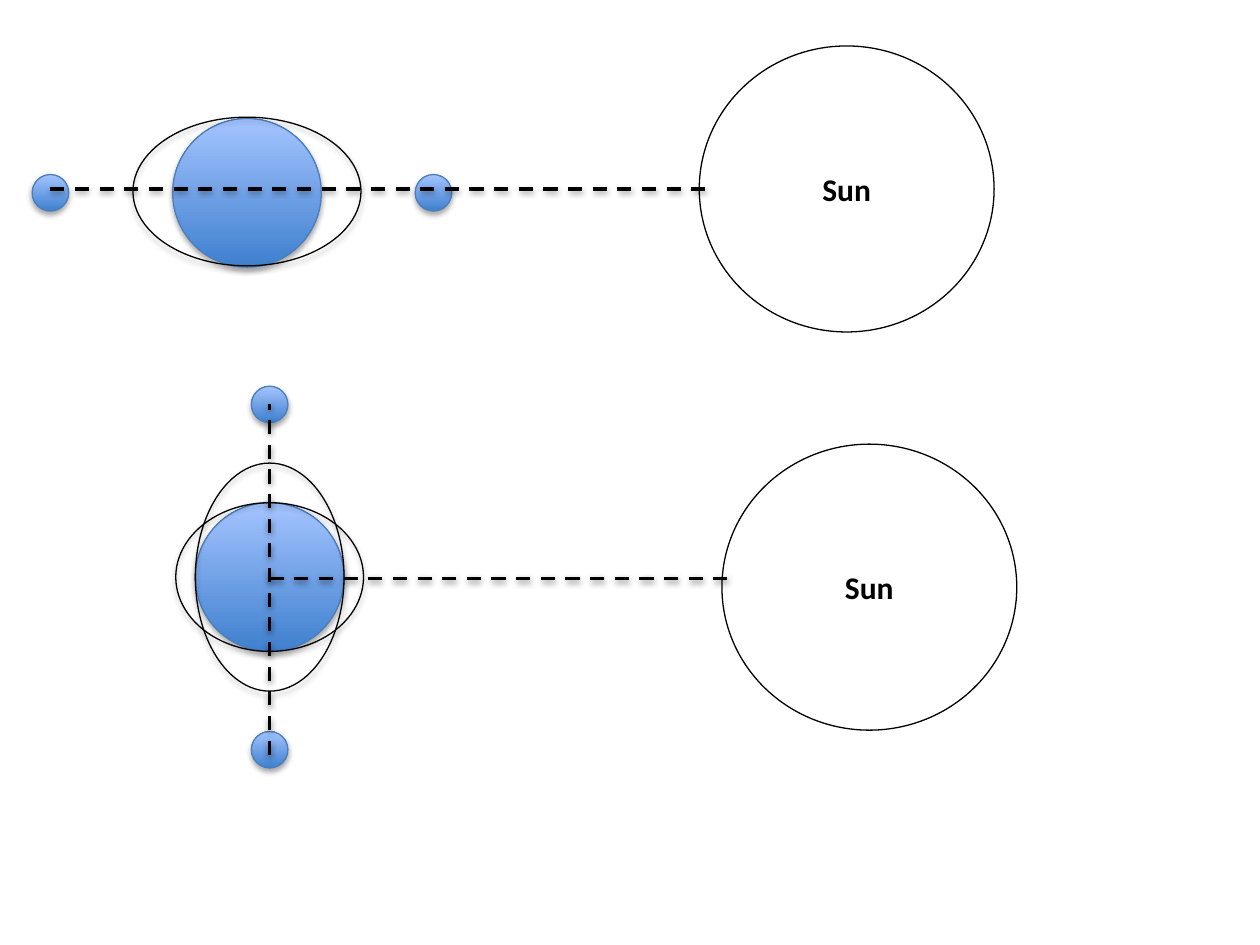
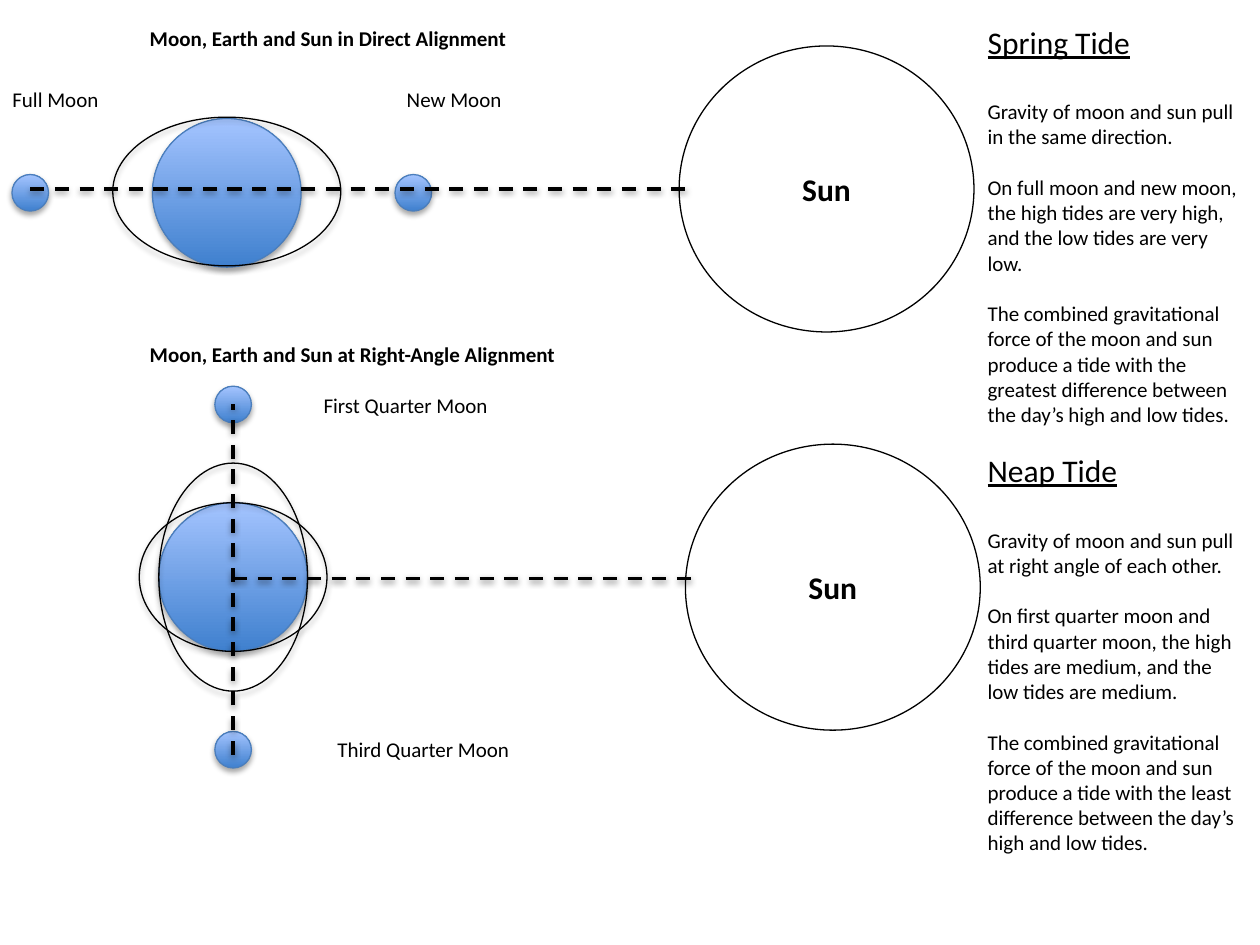
from dataclasses import dataclass

from lxml.etree import SubElement
from pptx import Presentation
from pptx.dml.color import RGBColor
from pptx.enum.dml import MSO_LINE_DASH_STYLE as Dash
from pptx.enum.shapes import MSO_CONNECTOR as Connector, MSO_SHAPE as Shape
from pptx.enum.text import MSO_ANCHOR as Anchor, MSO_AUTO_SIZE as AutoSize, PP_ALIGN as Align
from pptx.oxml.ns import qn
from pptx.util import Inches, Pt


@dataclass(frozen=True)
class Theme:
    font: str = "Calibri"
    ink: RGBColor = RGBColor.from_string("000000")
    globe_dark: RGBColor = RGBColor.from_string("3F80CE")
    globe_light: RGBColor = RGBColor.from_string("A4C4FF")
    globe_edge: RGBColor = RGBColor.from_string("4B7EBC")
    heading: int = 18
    body: int = 12
    outline: float = 0.75
    axis: int = 2


EARTH = 1.18
MOON = 0.29
TIDE_LONG, TIDE_SHORT = 1.81, 1.49
SUN_WIDTH, SUN_HEIGHT = 2.34, 2.27
SUN_OFFSET = 4.76       # from the Earth's centre to the Sun's
SUN_LINE_END = 3.66     # from the Earth's centre to the end of the axis


def add_shadow(effects, distance, opacity):
    """Fill an effect list with a soft shadow that falls straight down."""
    shadow = SubElement(effects, qn("a:outerShdw"), blurRad=str(Pt(3.15)),
                        dist=str(Pt(distance)), dir="5400000", rotWithShape="0")
    color = SubElement(shadow, qn("a:srgbClr"), val=str(Theme.ink))
    SubElement(color, qn("a:alpha"), val=str(opacity * 1000))


class Sketch:
    def __init__(self, presentation, theme):
        self.presentation = presentation
        self.theme = theme
        self.slide = None

    def new_slide(self):
        self.slide = self.presentation.slides.add_slide(self.presentation.slide_layouts[6])

    def style(self, paragraph, size, bold=False, underline=False):
        font = paragraph.font
        font.name, font.size = self.theme.font, Pt(size)
        font.bold, font.underline = bold, underline
        font.color.rgb = self.theme.ink

    def ellipse(self, x, y, width, height, shadow=True):
        """Draw an unfilled ellipse centred on x, y."""
        oval = self.slide.shapes.add_shape(
            Shape.OVAL, Inches(x - width / 2), Inches(y - height / 2),
            Inches(width), Inches(height))
        oval.fill.background()
        oval.line.color.rgb = self.theme.ink
        oval.line.width = Pt(self.theme.outline)
        oval.shadow.inherit = False
        if shadow:
            add_shadow(oval._element.spPr.find(qn("a:effectLst")), 1.8, 35)
        return oval

    def globe(self, x, y, diameter):
        ball = self.ellipse(x, y, diameter, diameter)
        ball.fill.gradient()
        ball.fill.gradient_angle = 90
        shades = self.theme.globe_dark, self.theme.globe_light
        for stop, position, shade in zip(ball.fill.gradient_stops, (0, 1), shades):
            stop.position = position
            stop.color.rgb = shade
        ball.line.color.rgb = self.theme.globe_edge

    def sun(self, x, y):
        disc = self.ellipse(x, y, SUN_WIDTH, SUN_HEIGHT, shadow=False)
        disc.text_frame.vertical_anchor = Anchor.MIDDLE
        name = disc.text_frame.paragraphs[0]
        name.text = "Sun"
        name.alignment = Align.CENTER
        self.style(name, self.theme.heading, bold=True)

    def axis(self, x1, y1, x2, y2):
        line = self.slide.shapes.add_connector(
            Connector.STRAIGHT, Inches(x1), Inches(y1), Inches(x2), Inches(y2))
        line.line.color.rgb = self.theme.ink
        line.line.width = Pt(self.theme.axis)
        line.line.dash_style = Dash.DASH
        add_shadow(SubElement(line._element.spPr, qn("a:effectLst")), 1.57, 38)

    def text_frame(self, x, y, width, height):
        frame = self.slide.shapes.add_textbox(
            Inches(x), Inches(y), Inches(width), Inches(height)).text_frame
        frame.word_wrap = True
        frame.auto_size = AutoSize.SHAPE_TO_FIT_TEXT
        return frame

    def label(self, text, x, y, width, bold=False):
        caption = self.text_frame(x, y, width, 0.3).paragraphs[0]
        caption.text = text
        self.style(caption, self.theme.body, bold=bold)

    def explanation(self, y, tide, facts):
        frame = self.text_frame(7.74, y, 2.26, 3.33)
        heading = frame.paragraphs[0]
        heading.text = tide
        self.style(heading, self.theme.heading, underline=True)
        for index, fact in enumerate(facts):
            paragraph = frame.add_paragraph()
            paragraph.text = fact
            paragraph.space_before = Pt(14.5 if index else 22)
            self.style(paragraph, self.theme.body)

    def direct_alignment(self, x):
        """Draw both moons, the Earth centred on x, and the Sun in one row."""
        self.globe(x, 1.53, EARTH)
        self.ellipse(x, 1.52, TIDE_LONG, EARTH)
        self.globe(x + 1.48, 1.53, MOON)
        self.globe(x - 1.56, 1.53, MOON)
        self.axis(x - 1.56, 1.5, x + SUN_LINE_END, 1.5)
        self.sun(x + SUN_OFFSET, 1.5)

    def right_angle_alignment(self, x):
        """Draw the moons above and below the Earth, with the Sun to the right."""
        self.globe(x, 4.58, EARTH)
        self.ellipse(x, 4.58, TIDE_LONG, EARTH).rotation = 90
        self.ellipse(x, 4.58, TIDE_SHORT, EARTH)
        for moon_y in (3.21, 5.95):
            self.globe(x, moon_y, MOON)
        self.sun(x + SUN_OFFSET, 4.66)
        self.axis(x, 4.59, x + SUN_LINE_END, 4.59)
        self.axis(x, 5.99, x, 3.21)


def main():
    presentation = Presentation()
    presentation.slide_width, presentation.slide_height = Inches(10), Inches(7.5)
    sketch = Sketch(presentation, Theme())

    for direct_x, right_angle_x in ((1.96, 2.14), (1.8, 1.85)):
        sketch.new_slide()
        sketch.direct_alignment(direct_x)
        sketch.right_angle_alignment(right_angle_x)

    sketch.explanation(0.13, "Spring Tide", (
        "Gravity of moon and sun pull in the same direction.",
        "On full moon and new moon, the high tides are very high, "
        "and the low tides are very low.",
        "The combined gravitational force of the moon and sun produce a tide "
        "with the greatest difference between the day’s high and low tides."))
    sketch.explanation(3.53, "Neap Tide", (
        "Gravity of moon and sun pull at right angle of each other.",
        "On first quarter moon and third quarter moon, the high tides are medium, "
        "and the low tides are medium.",
        "The combined gravitational force of the moon and sun produce a tide "
        "with the least difference between the day’s high and low tides."))

    sketch.label("New Moon", 3.13, 0.64, 1.23)
    sketch.label("Full Moon", 0, 0.64, 1.23)
    sketch.label("Moon, Earth and Sun in Direct Alignment", 1.09, 0.15, 3.56, bold=True)
    sketch.label("Moon, Earth and Sun at Right-Angle Alignment", 1.09, 2.66, 3.56, bold=True)
    sketch.label("First Quarter Moon", 2.47, 3.07, 1.66)
    sketch.label("Third Quarter Moon", 2.58, 5.8, 1.66)

    presentation.save("out.pptx")


if __name__ == "__main__":
    main()
